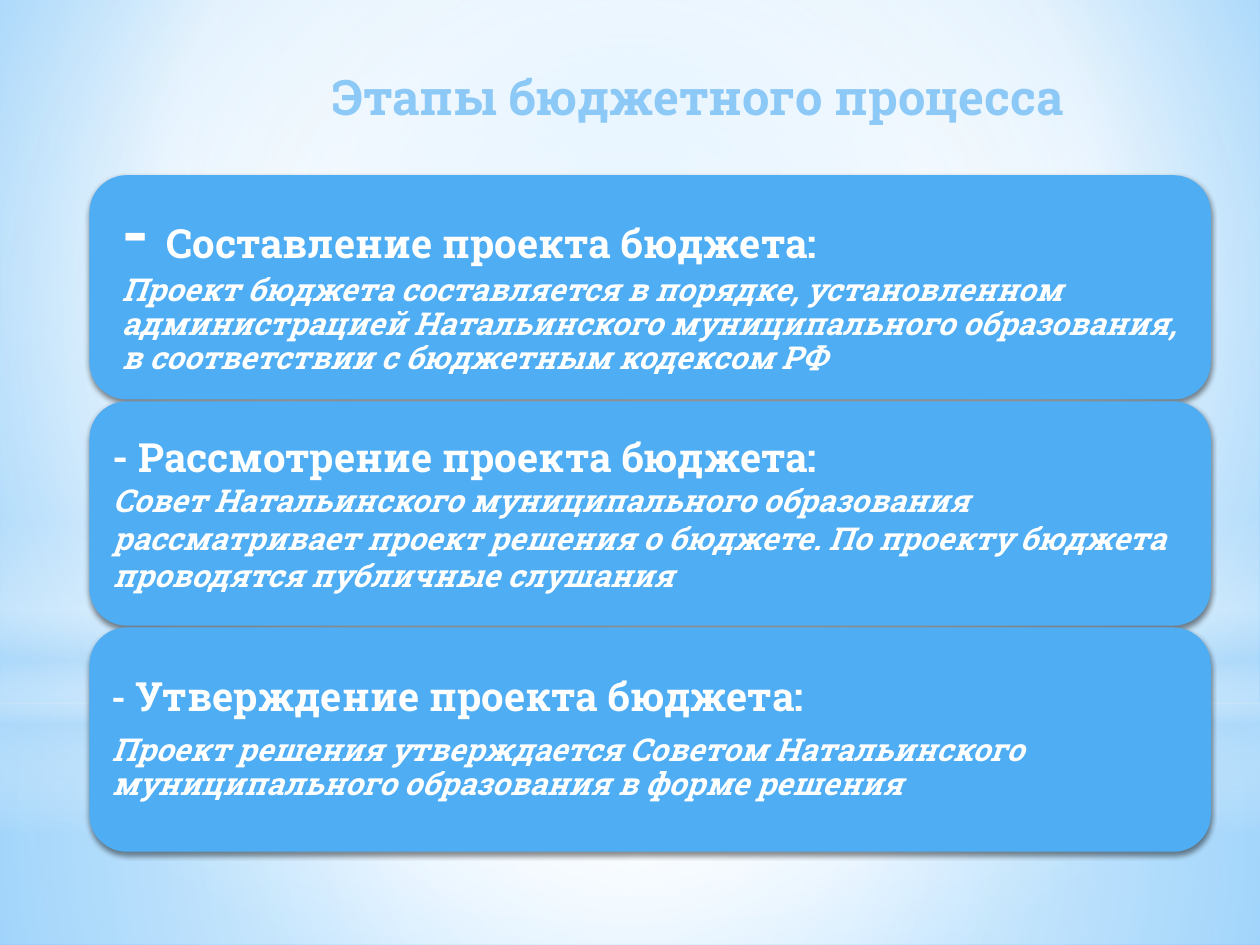
from pptx import Presentation
from pptx.dml.color import RGBColor
from pptx.enum.shapes import MSO_SHAPE
from pptx.enum.text import MSO_ANCHOR, PP_ALIGN
from pptx.oxml import parse_xml
from pptx.oxml.ns import nsdecls, qn
from pptx.util import Inches, Pt

RECT, OVAL, ROUND = MSO_SHAPE.RECTANGLE, MSO_SHAPE.OVAL, MSO_SHAPE.ROUNDED_RECTANGLE
LEFT, RIGHT, MIDDLE = PP_ALIGN.LEFT, PP_ALIGN.RIGHT, MSO_ANCHOR.MIDDLE
FONT = "Roboto Slab"
CENTER = (50, 50, 50, 50)


def color(text):
    return RGBColor.from_string(text)


def blend(fill, props, stops, focus=None):
    fill.solid()
    marks = "".join(
        f'<a:gs pos="{pos * 1000}"><a:srgbClr val="{tone}">'
        f'<a:alpha val="{alpha * 1000}"/></a:srgbClr></a:gs>'
        for pos, tone, alpha in stops)
    if focus:
        l, t, r, b = (side * 1000 for side in focus)
        way = f'<a:path path="circle"><a:fillToRect l="{l}" t="{t}" r="{r}" b="{b}"/></a:path>'
    else:
        way = '<a:lin ang="5400000" scaled="0"/>'
    grad = parse_xml(f'<a:gradFill {nsdecls("a")} rotWithShape="1">'
                     f'<a:gsLst>{marks}</a:gsLst>{way}</a:gradFill>')
    props.replace(props.find(qn("a:solidFill")), grad)


deck = Presentation()
deck.slide_width, deck.slide_height = Inches(10), Inches(7.5)
slide = deck.slides.add_slide(deck.slide_layouts[5])
shapes = slide.shapes

fill = slide.background.fill
fill.solid()
blend(fill, slide._element.cSld.bg.bgPr,
      [(0, "9ED5FF", 100), (60, "FFFFFF", 100), (100, "5BB9FF", 100)], (20, 10, 20, 60))

glows = [
    (RECT, 5.58, 1.92, [(0, "FFFFFF", 91), (37, "FFFFFF", 76), (100, "B4DCFA", 79)], CENTER),
    (RECT, 0, 5.58, [(0, "FFFFFF", 89), (48, "FFFFFF", 62), (100, "B4DCFA", 79)], CENTER),
    (RECT, 4.12, 2.5, [(0, "FFFFFF", 0), (29, "FFFFFF", 30), (45, "B4DCFA", 40),
                       (55, "FFFFFF", 26), (65, "B4DCFA", 60), (100, "FFFFFF", 0)], None),
    (OVAL, 1.75, 5.58, [(0, "FFFFFF", 100), (56, "FFFFFF", 0)], CENTER),
]
for kind, top, height, stops, focus in glows:
    glow = shapes.add_shape(kind, 0, Inches(top), Inches(10), Inches(height))
    glow.shadow.inherit = False
    glow.line.fill.background()
    blend(glow.fill, glow._element.spPr, stops, focus)

title = shapes.title
shapes._spTree.append(title._element)
title.left, title.top = Inches(1.77), Inches(0.44)
title.width, title.height = Inches(6.77), Inches(0.64)
title.text_frame.text = "Этапы бюджетного процесса"
title.text_frame.vertical_anchor = MIDDLE
head = title.text_frame.paragraphs[0]
head.alignment = RIGHT
head.font.name, head.font.size, head.font.bold = FONT, Pt(28), True
head.font.color.rgb = color("8CC9F7")

steps = [
    (40, "Составление проекта бюджета:",
     "Проект бюджета составляется в порядке, установленном администрацией "
     "Натальинского муниципального образования, в соответствии с бюджетным кодексом РФ",
     0.17, 0.9, 0),
    (23, "Рассмотрение проекта бюджета:",
     "Совет Натальинского муниципального образования рассматривает проект решения "
     "о бюджете. По проекту бюджета проводятся публичные слушания",
     0.1, 1, 0),
    (21, "Утверждение проекта бюджета:",
     "Проект решения утверждается Советом Натальинского муниципального образования "
     "в форме решения",
     0.09, 0.9, 8),
]
for row, (dash, name, detail, inset, pitch, after) in enumerate(steps):
    box = shapes.add_shape(ROUND, Inches(0.71), Inches(1.39 + row * 1.795),
                           Inches(8.9), Inches(1.78))
    box.fill.solid()
    box.fill.fore_color.rgb = color("4FADF3")
    box.line.fill.background()
    box.shadow.inherit = False
    box._element.spPr.find(qn("a:effectLst")).append(parse_xml(
        f'<a:outerShdw {nsdecls("a")} blurRad="{Pt(3.1)}" dist="{Pt(1.8)}" dir="5400000" '
        'rotWithShape="0"><a:srgbClr val="000000"><a:alpha val="45000"/></a:srgbClr></a:outerShdw>'))
    frame = box.text_frame
    frame.word_wrap = True
    frame.vertical_anchor = MIDDLE
    frame.margin_left = frame.margin_right = Inches(inset)
    frame.margin_top = frame.margin_bottom = Inches(inset)
    first, second = frame.paragraphs[0], frame.add_paragraph()
    for text, size in (("- ", dash), (name, 23)):
        run = first.add_run()
        run.text, run.font.size = text, Pt(size)
    second.text = detail
    second.font.size, second.font.italic = Pt(18), True
    for para in (first, second):
        para.alignment = LEFT
        para.line_spacing, para.space_after = pitch, Pt(after)
        para.font.name, para.font.bold = FONT, True
        para.font.color.rgb = color("FFFFFF")

deck.save("out.pptx")
